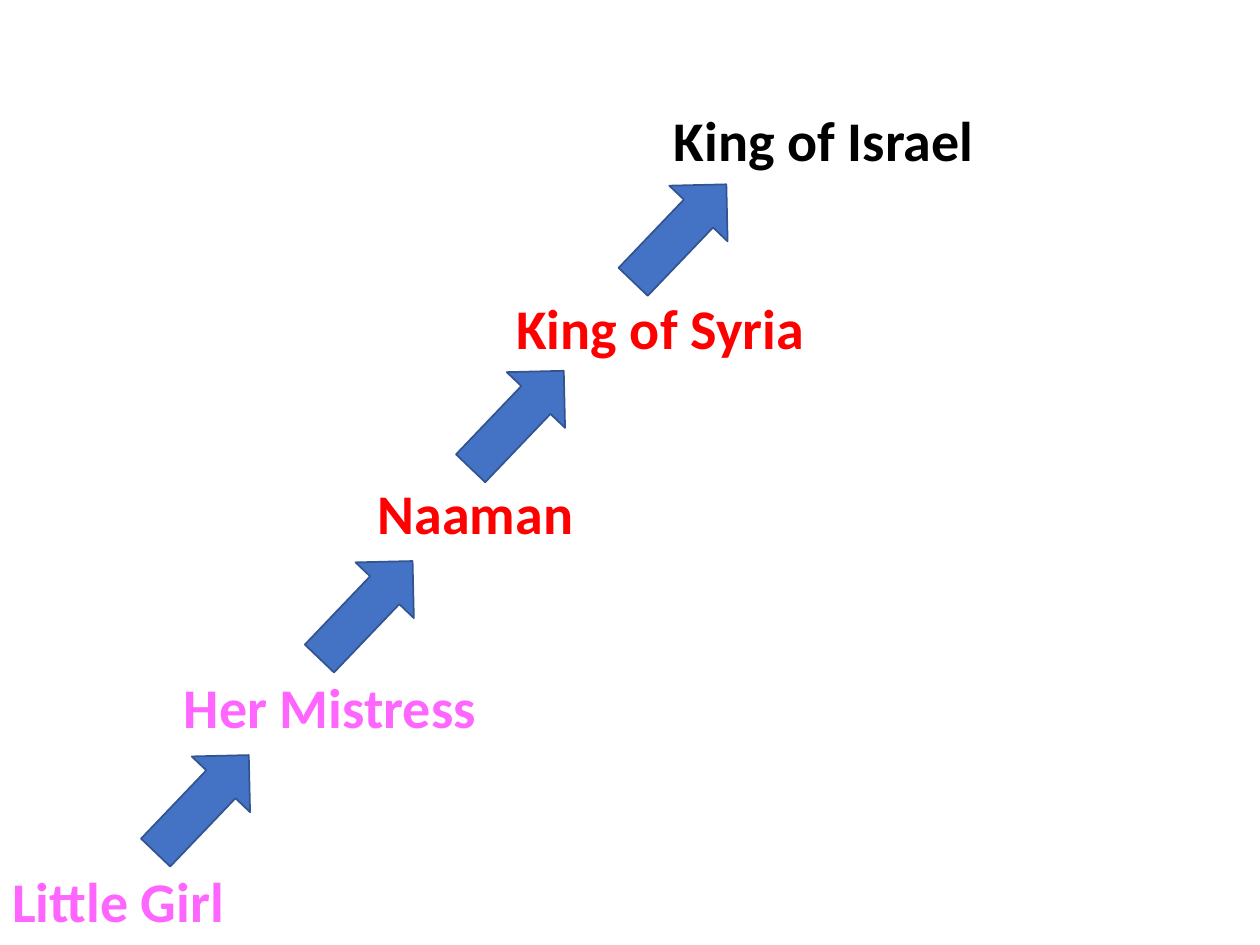
from typing import NamedTuple

from pptx import Presentation
from pptx.dml.color import RGBColor
from pptx.enum.shapes import MSO_SHAPE
from pptx.enum.text import MSO_AUTO_SIZE
from pptx.slide import Slide
from pptx.util import Pt

PINK = RGBColor(0xFF, 0x66, 0xFF)
RED = RGBColor(0xFF, 0x00, 0x00)
BLACK = RGBColor(0x00, 0x00, 0x00)
ARROW_FILL = RGBColor(0x44, 0x72, 0xC4)
ARROW_LINE = RGBColor(0x32, 0x54, 0x91)

ROW_HEIGHT = 46.08
ARROW_WIDTH = 77.04
ARROW_ROTATION = 313.7
LABEL_FORMAT = {"name": "Calibri", "size": Pt(32), "bold": True}


class Label(NamedTuple):
    text: str
    left: float
    top: float
    width: float
    color: RGBColor


class Arrow(NamedTuple):
    left: float
    top: float


LABELS = [
    Label("Little Girl", 0, 491.76, 144, PINK),
    Label("Her Mistress", 97.92, 380.88, 222.48, PINK),
    Label("Naaman", 208.8, 270, 222.48, RED),
    Label("King of Syria", 288, 164.16, 222.48, RED),
    Label("King of Israel", 378, 56.88, 222.48, BLACK),
]
ARROWS = [
    Arrow(77.04, 436.32),
    Arrow(170.64, 325.44),
    Arrow(257.04, 216.72),
    Arrow(349.92, 110.16),
]


def draw_label(page: Slide, label: Label) -> None:
    box = page.shapes.add_textbox(
        Pt(label.left), Pt(label.top), Pt(label.width), Pt(ROW_HEIGHT)
    )
    frame = box.text_frame
    frame.word_wrap = True
    frame.auto_size = MSO_AUTO_SIZE.SHAPE_TO_FIT_TEXT
    span = frame.paragraphs[0].add_run()
    span.text = label.text
    for name, value in LABEL_FORMAT.items():
        setattr(span.font, name, value)
    span.font.color.rgb = label.color


def draw_arrow(page: Slide, arrow: Arrow) -> None:
    shape = page.shapes.add_shape(
        MSO_SHAPE.RIGHT_ARROW,
        Pt(arrow.left), Pt(arrow.top), Pt(ARROW_WIDTH), Pt(ROW_HEIGHT),
    )
    shape.rotation = ARROW_ROTATION
    shape.shadow.inherit = False
    shape.fill.solid()
    shape.fill.fore_color.rgb = ARROW_FILL
    shape.line.color.rgb = ARROW_LINE
    shape.line.width = Pt(1)


def main() -> None:
    """Build the chain of people, each step linked upward by an arrow."""
    deck = Presentation()
    deck.slide_width, deck.slide_height = Pt(720), Pt(540)
    page = deck.slides.add_slide(deck.slide_layouts[6])
    for label in LABELS:
        draw_label(page, label)
    for arrow in ARROWS:
        draw_arrow(page, arrow)
    deck.save("out.pptx")


if __name__ == "__main__":
    main()
